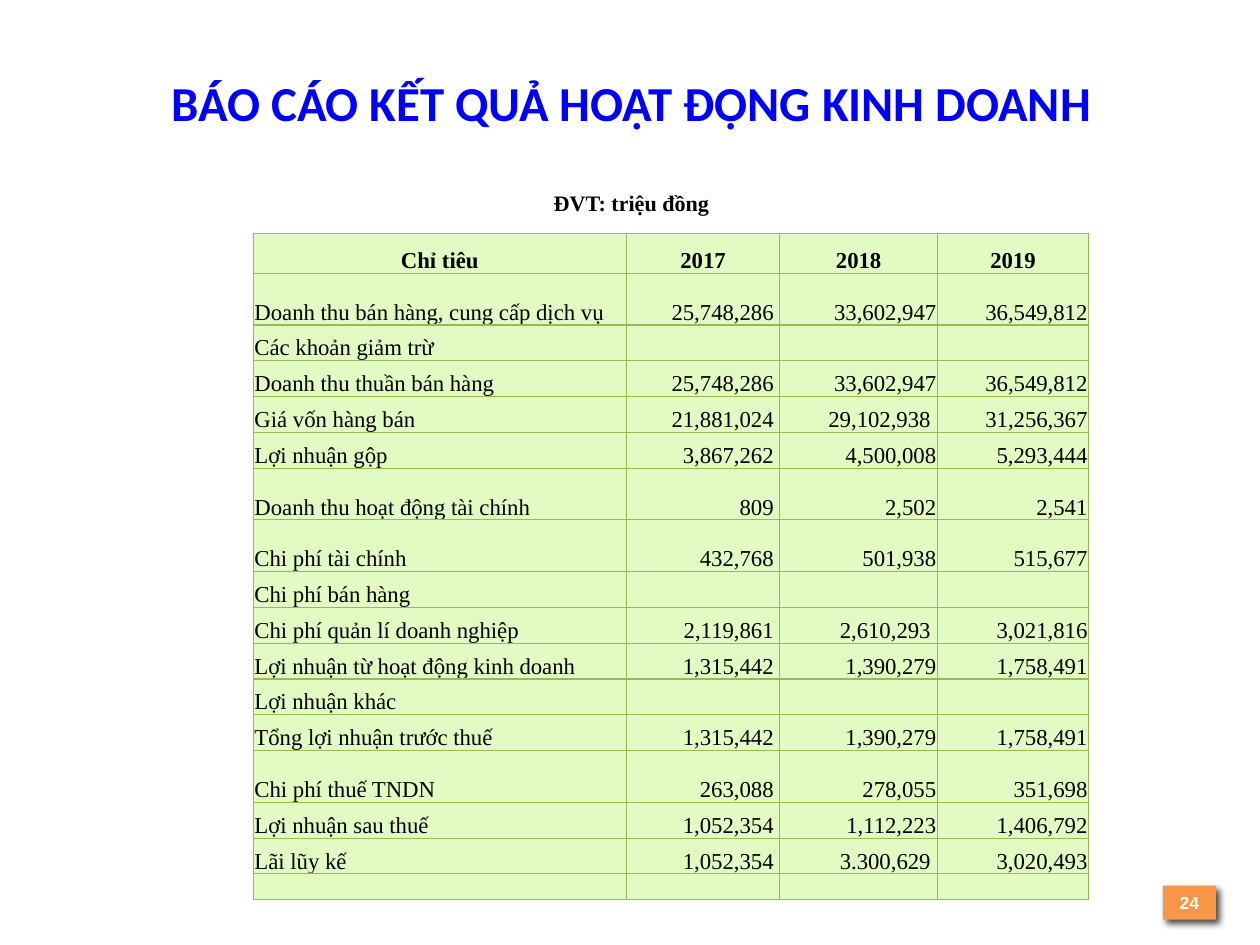
"""Build the income statement slide with its table of yearly figures."""
import pptx
import pptx.util
import pptx.dml.color
import pptx.enum.text
import pptx.enum.shapes
import pptx.oxml
import pptx.oxml.ns

Inches, Pt = pptx.util.Inches, pptx.util.Pt
ALIGN = pptx.enum.text.PP_ALIGN
ANCHOR = pptx.enum.text.MSO_ANCHOR

TITLE = "BÁO CÁO KẾT QUẢ HOẠT ĐỘNG KINH DOANH"
UNIT = "ĐVT: triệu đồng"
PAGE = "24"
ROWS = [
    ("Chỉ tiêu", "2017", "2018", "2019"),
    ("Doanh thu bán hàng, cung cấp dịch vụ", "25,748,286", "33,602,947", "36,549,812"),
    ("Các khoản giảm trừ", "", "", ""),
    ("Doanh thu thuần bán hàng", "25,748,286", "33,602,947", "36,549,812"),
    ("Giá vốn hàng bán", "21,881,024", "29,102,938 ", "31,256,367"),
    ("Lợi nhuận gộp", "3,867,262", "4,500,008", "5,293,444"),
    ("Doanh thu hoạt động tài chính", "809", "2,502", "2,541"),
    ("Chi phí tài chính", "432,768", "501,938", "515,677"),
    ("Chi phí bán hàng", "", "", ""),
    ("Chi phí quản lí doanh nghiệp", "2,119,861", "2,610,293 ", "3,021,816"),
    ("Lợi nhuận từ hoạt động kinh doanh", "1,315,442", "1,390,279", "1,758,491"),
    ("Lợi nhuận khác", "", "", ""),
    ("Tổng lợi nhuận trước thuế", "1,315,442", "1,390,279", "1,758,491"),
    ("Chi phí thuế TNDN", "263,088", "278,055", "351,698"),
    ("Lợi nhuận sau thuế", "1,052,354", "1,112,223", "1,406,792"),
    ("Lãi lũy kế", "1,052,354", "3.300,629 ", "3,020,493"),
    ("", "", "", ""),
]
COLS = [2.96, 1.22, 1.25, 1.2]
RIGHT_MARGINS = [0.01, 0.05, 0.01, 0.01]
TABLE_HEIGHT = 5.29
SPECIAL_HEIGHTS = {0: 0.32, 1: 0.41, 6: 0.41, 7: 0.41, 13: 0.41, 16: 0.2}
SERIF = "Times New Roman"


def rgb(value):
    return pptx.dml.color.RGBColor.from_string(value)


def add_run(p, text, size, font, color, bold=True):
    r = p.add_run()
    r.text = text
    r.font.size, r.font.name, r.font.bold = Pt(size), font, bold
    r.font.color.rgb = rgb(color)


def add_xml(parent, xml):
    ns = pptx.oxml.ns.nsdecls("a")
    parent.append(pptx.oxml.parse_xml(xml.replace(" NS", " " + ns, 1)))


def set_borders(cell, color, width):
    tc_pr = cell._tc.get_or_add_tcPr()
    for side in ("lnL", "lnR", "lnT", "lnB"):
        add_xml(tc_pr, f'<a:{side} NS w="{Pt(width)}"><a:solidFill>'
                       f'<a:srgbClr val="{color}"/></a:solidFill></a:{side}>')


def add_title(s):
    sp = s.shapes.title
    sp.left, sp.top, sp.width, sp.height = map(Inches, (0.51, 0.52, 9, 1.25))
    tf = sp.text_frame
    tf.auto_size = pptx.enum.text.MSO_AUTO_SIZE.NONE
    tf.vertical_anchor = ANCHOR.MIDDLE
    add_run(tf.paragraphs[0], TITLE, 27.9, "Calibri", "0000FF")
    p = tf.add_paragraph()
    p.space_before = Pt(33)
    add_run(p, UNIT, 12.6, SERIF, "000000")
    for p in tf.paragraphs:
        p.alignment = ALIGN.CENTER


def fill_cell(cell, text, row, col):
    cell.vertical_anchor = ANCHOR.BOTTOM
    cell.margin_left = cell.margin_top = Inches(0.01)
    cell.margin_right = Inches(0.01 if row == 0 else RIGHT_MARGINS[col])
    cell.margin_bottom = 0
    p = cell.text_frame.paragraphs[0]
    if row == 0:
        p.alignment = ALIGN.CENTER
    else:
        p.alignment = ALIGN.RIGHT if col else ALIGN.LEFT
    if text:
        add_run(p, text, 13, SERIF, "000000", row == 0)
    else:
        add_xml(p._p, '<a:endParaRPr NS sz="1000"/>')
    set_borders(cell, "98B955", 0.75)
    cell.fill.solid()
    cell.fill.fore_color.rgb = rgb("E2FBC2")


def add_figures(s):
    frame = s.shapes.add_table(len(ROWS), len(COLS), Inches(2.01), Inches(1.85),
                               Inches(sum(COLS)), Inches(TABLE_HEIGHT))
    table = frame.table
    for column, width in zip(table.columns, COLS):
        column.width = Inches(width)
    normal = (TABLE_HEIGHT - sum(SPECIAL_HEIGHTS.values())) / (len(ROWS) - len(SPECIAL_HEIGHTS))
    for i, values in enumerate(ROWS):
        table.rows[i].height = Inches(SPECIAL_HEIGHTS.get(i, normal))
        for j, text in enumerate(values):
            fill_cell(table.cell(i, j), text, i, j)


def add_page_number(s):
    sp = s.shapes.add_shape(pptx.enum.shapes.MSO_SHAPE.RECTANGLE,
                            Inches(9.23), Inches(7.03), Inches(0.42), Inches(0.27))
    sp.fill.solid()
    sp.fill.fore_color.rgb = rgb("F79646")
    sp.line.fill.background()
    add_xml(sp._element.spPr,
            f'<a:effectLst NS><a:outerShdw blurRad="{Pt(4)}" dist="{Pt(3)}" dir="2700000">'
            '<a:srgbClr val="000000"><a:alpha val="73000"/></a:srgbClr>'
            '</a:outerShdw></a:effectLst>')
    tf = sp.text_frame
    tf.margin_left = tf.margin_right = tf.margin_top = tf.margin_bottom = 0
    tf.vertical_anchor = ANCHOR.MIDDLE
    p = tf.paragraphs[0]
    p.alignment = ALIGN.CENTER
    add_run(p, PAGE, 10, "Arial", "FFFFFF")


def main():
    prs = pptx.Presentation()
    prs.slide_width, prs.slide_height = Inches(10), Inches(7.5)
    s = prs.slides.add_slide(prs.slide_layouts[5])
    add_title(s)
    add_figures(s)
    add_page_number(s)
    prs.save("out.pptx")


if __name__ == "__main__":
    main()
